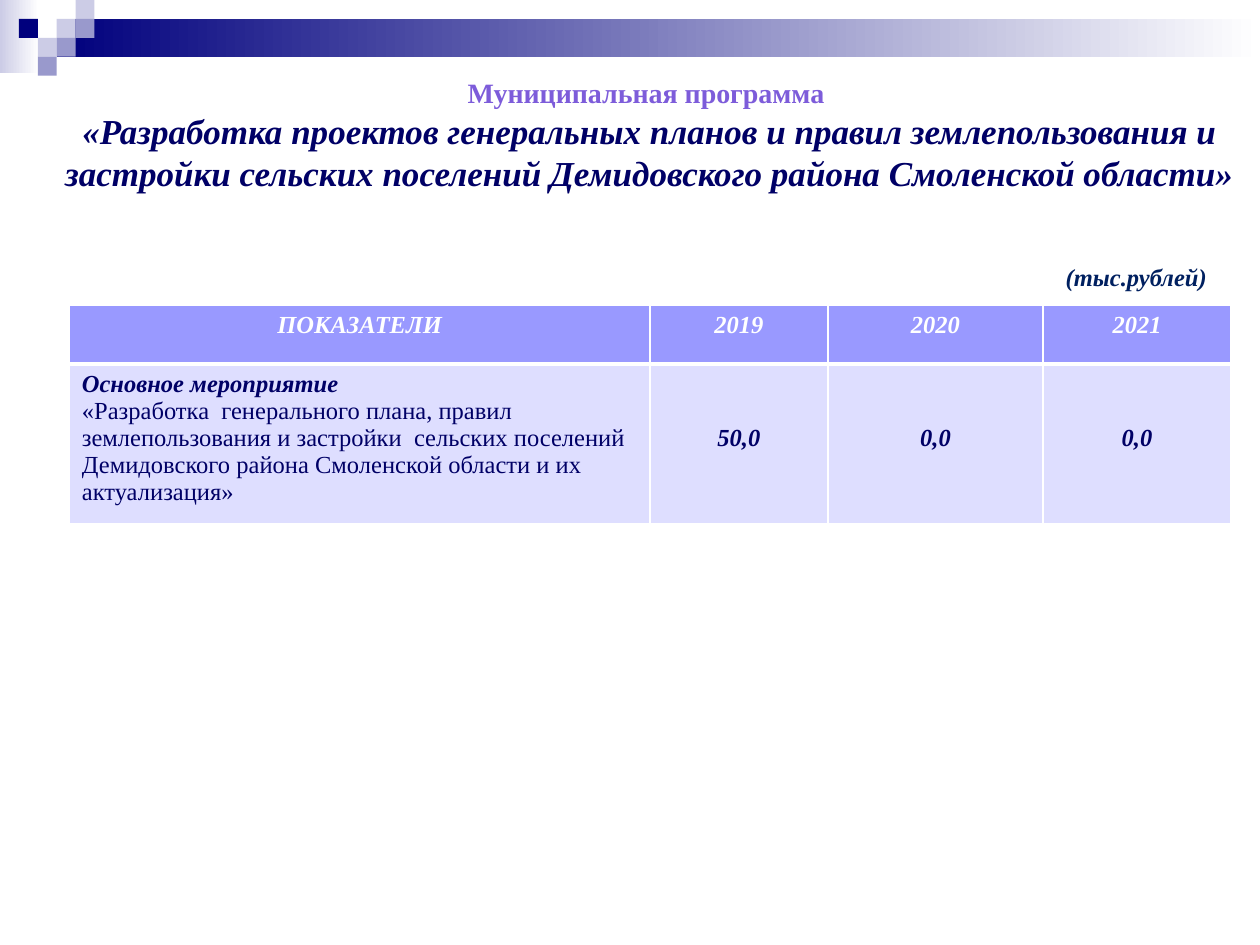
from dataclasses import dataclass

from lxml import etree
from pptx import Presentation
from pptx.dml.color import RGBColor
from pptx.enum.shapes import MSO_SHAPE
from pptx.enum.text import MSO_AUTO_SIZE, PP_ALIGN
from pptx.oxml.ns import qn
from pptx.util import Inches, Pt

RECT = MSO_SHAPE.RECTANGLE
LEFT, CENTER = PP_ALIGN.LEFT, PP_ALIGN.CENTER
FIT_SHAPE = MSO_AUTO_SIZE.SHAPE_TO_FIT_TEXT


@dataclass(frozen=True)
class Theme:
    font: str = "Times New Roman"
    navy: str = "00007D"
    lavender: str = "CCCCE6"
    violet: str = "9999CC"
    white: str = "FFFFFF"
    label: str = "7D5CDA"
    ink: str = "000066"
    unit: str = "002060"
    header: str = "9999FF"
    body: str = "DEDEFF"
    title_size: int = 20
    label_size: int = 16
    text_size: int = 14


@dataclass(frozen=True)
class Block:
    left: float
    top: float
    width: float
    height: float
    color: str
    fade_to: str = ""


T = Theme()
SQUARE = 0.15

BANDS = [
    Block(0, 0, 0.31, 0.58, T.lavender, T.white),
    Block(0.45, 0.15, 9.55, 0.3, T.navy, T.white),
]
# Column and row of each square in the corner mosaic
MOSAIC = [
    (3, 1, T.lavender), (4, 0, T.lavender), (4, 1, T.violet),
    (2, 2, T.lavender), (1, 1, T.navy), (3, 2, T.violet), (2, 3, T.violet),
]

COLUMNS = [4.61, 1.41, 1.71, 1.49]
ROWS = [0.47, 1.25]
HEADERS = ["ПОКАЗАТЕЛИ", "2019", "2020", "2021"]
VALUES = ["50,0", "0,0", "0,0"]


def add_block(slide, block: Block) -> None:
    sp = slide.shapes.add_shape(RECT, Inches(block.left), Inches(block.top),
                                Inches(block.width), Inches(block.height))
    sp.shadow.inherit = False
    sp.line.fill.background()
    if block.fade_to:
        sp.fill.gradient()
        sp.fill.gradient_angle = 0
        for stop, color in zip(sp.fill.gradient_stops, (block.color, block.fade_to)):
            stop.color.rgb = RGBColor.from_string(color)
    else:
        sp.fill.solid()
        sp.fill.fore_color.rgb = RGBColor.from_string(block.color)


def write(tf, text: str, *, color: str, size: int = T.text_size, bold: bool = True,
          italic: bool = True, align: PP_ALIGN = LEFT) -> None:
    """Fill the first paragraph, or add one when it is already used."""
    p = tf.add_paragraph() if tf.text else tf.paragraphs[0]
    p.alignment = align
    r = p.add_run()
    r.text = text
    r.font.name = T.font
    r.font.size = Pt(size)
    r.font.bold = bold
    r.font.italic = italic
    r.font.color.rgb = RGBColor.from_string(color)


def add_text_box(slide, left: float, top: float, width: float, height: float, wrap: bool):
    tf = slide.shapes.add_textbox(Inches(left), Inches(top),
                                  Inches(width), Inches(height)).text_frame
    tf.word_wrap = wrap
    tf.auto_size = FIT_SHAPE
    return tf


def style_cell(cell, fill: str, top: float, bottom: float) -> None:
    tc_pr = cell._tc.get_or_add_tcPr()
    for side, width in (("L", 1), ("R", 1), ("T", top), ("B", bottom)):
        ln = etree.SubElement(tc_pr, qn(f"a:ln{side}"), w=str(Pt(width)))
        solid = etree.SubElement(ln, qn("a:solidFill"))
        etree.SubElement(solid, qn("a:srgbClr"), val=T.white)
    cell.fill.solid()
    cell.fill.fore_color.rgb = RGBColor.from_string(fill)


def add_indicators(slide) -> None:
    table = slide.shapes.add_table(len(ROWS), len(COLUMNS), Inches(0.55), Inches(2.42),
                                   Inches(sum(COLUMNS)), Inches(sum(ROWS))).table
    for column, width in zip(table.columns, COLUMNS):
        column.width = Inches(width)
    for row, height in zip(table.rows, ROWS):
        row.height = Inches(height)

    # Header row
    for i, text in enumerate(HEADERS):
        cell = table.cell(0, i)
        style_cell(cell, T.header, top=1, bottom=3)
        write(cell.text_frame, text, color=T.white, align=CENTER)

    # Activity row
    activity = table.cell(1, 0)
    style_cell(activity, T.body, top=3, bottom=1)
    write(activity.text_frame, "Основное мероприятие", color=T.ink)
    write(activity.text_frame,
          "«Разработка  генерального плана, правил землепользования и застройки  "
          "сельских поселений Демидовского района Смоленской области и их актуализация»",
          color=T.ink, bold=False, italic=False)
    for i, text in enumerate(VALUES, start=1):
        cell = table.cell(1, i)
        style_cell(cell, T.body, top=3, bottom=1)
        cell.margin_top = Inches(0.48)
        write(cell.text_frame, text, color=T.ink, align=CENTER)


def main() -> None:
    prs = Presentation()
    prs.slide_width, prs.slide_height = Inches(10), Inches(7.5)
    s = prs.slides.add_slide(prs.slide_layouts[6])

    # Top band and corner mosaic
    for band in BANDS:
        add_block(s, band)
    for col, row, color in MOSAIC:
        add_block(s, Block(col * SQUARE, row * SQUARE, SQUARE, SQUARE, color))

    # Title
    tf = add_text_box(s, 0.31, 0.55, 9.69, 1.04, wrap=True)
    write(tf, "Муниципальная программа ", color=T.label, size=T.label_size,
          italic=False, align=CENTER)
    write(tf, "«Разработка проектов генеральных планов и правил землепользования и "
              "застройки сельских поселений Демидовского района Смоленской области»",
          color=T.ink, size=T.title_size, align=CENTER)

    # Indicators with their unit
    add_indicators(s)
    tf = add_text_box(s, 8.36, 2.03, 1.33, 0.34, wrap=False)
    write(tf, "(тыс.рублей)", color=T.unit)

    prs.save("out.pptx")


if __name__ == "__main__":
    main()
